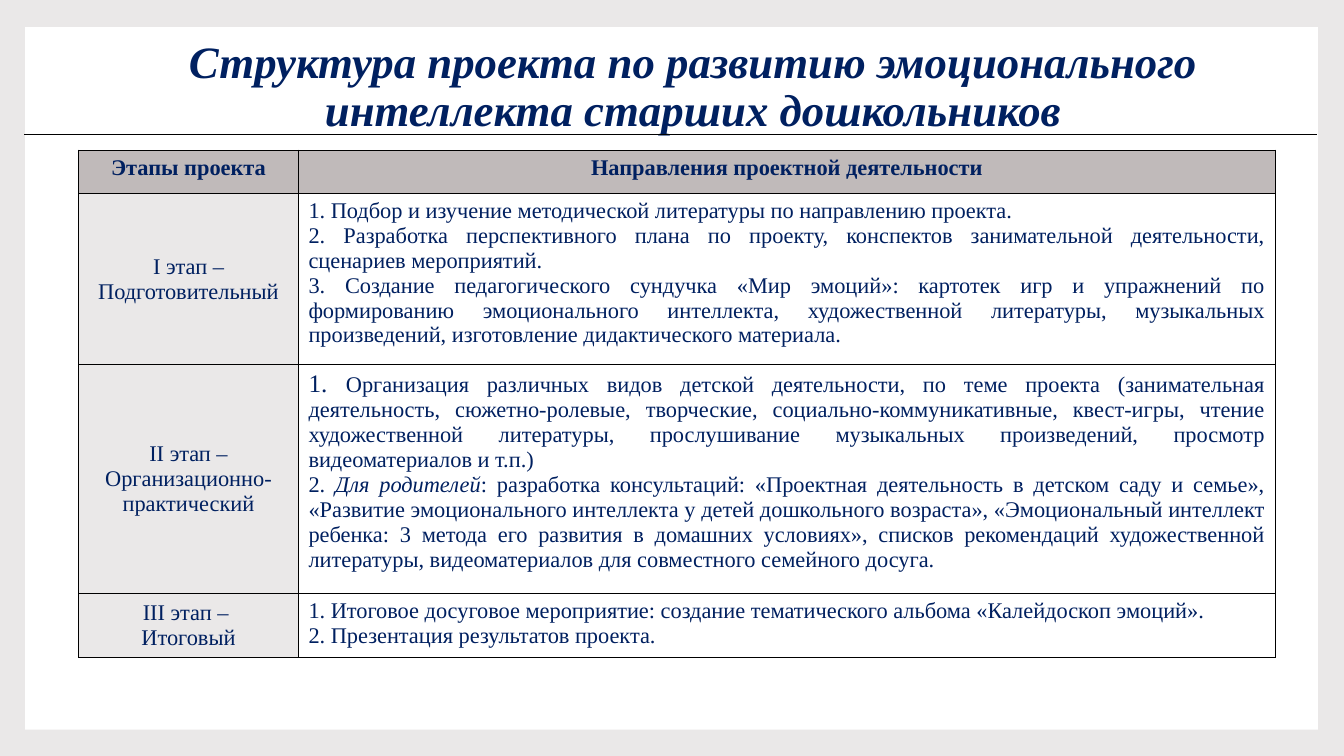
"""Build a slide with the stages of a preschool project."""
from lxml import etree
from pptx import Presentation
from pptx.dml.color import RGBColor
from pptx.enum import shapes, text
from pptx.oxml.ns import qn
from pptx.util import Inches, Pt

FONT = "Times New Roman"
NAVY = RGBColor(0x00, 0x20, 0x60)
BLACK = RGBColor(0x00, 0x00, 0x00)
WHITE = RGBColor(0xFF, 0xFF, 0xFF)
PALE_GRAY = RGBColor(0xEA, 0xE8, 0xE8)
HEADER_GRAY = RGBColor(0xC0, 0xBA, 0xBA)

TITLE = "Структура проекта по развитию эмоционального интеллекта старших дошкольников"
HEADERS = ("Этапы проекта", "Направления проектной деятельности")
STAGES = [
    (["I этап – Подготовительный"], [
        "1. Подбор и изучение методической литературы по направлению проекта.",
        "2. Разработка перспективного плана по проекту, конспектов занимательной "
        "деятельности, сценариев мероприятий.",
        "3. Создание педагогического сундучка «Мир эмоций»: картотек игр и упражнений "
        "по формированию эмоционального интеллекта, художественной литературы, "
        "музыкальных произведений, изготовление дидактического материала.",
    ]),
    (["II этап – Организационно-практический"], [
        [("1. ", {"size": Pt(18)}),
         ("Организация различных видов детской деятельности, по теме проекта "
          "(занимательная деятельность, сюжетно-ролевые, творческие, "
          "социально-коммуникативные, квест-игры, чтение художественной литературы, "
          "прослушивание музыкальных произведений, просмотр видеоматериалов и т.п.)", {})],
        [("2. ", {}),
         ("Для родителей", {"italic": True}),
         (": разработка консультаций: «Проектная деятельность в детском саду и семье», "
          "«Развитие эмоционального интеллекта у детей дошкольного возраста», "
          "«Эмоциональный интеллект ребенка: 3 метода его развития в домашних условиях», "
          "списков рекомендаций художественной литературы, видеоматериалов для "
          "совместного семейного досуга.", {})],
    ]),
    (["III этап – ", "Итоговый"], [
        "1. Итоговое досуговое мероприятие: создание тематического альбома "
        "«Калейдоскоп эмоций».",
        "2. Презентация результатов проекта. ",
    ]),
]
COLUMN_WIDTHS = (2.18, 9.69)
ROW_HEIGHTS = (0.43, 1.57, 2.12, 0.6)


def write_paragraphs(frame, paragraphs, alignment, size, bold=False, italic=False):
    """Fill a text frame with paragraphs given as strings or lists of styled runs."""
    for index, content in enumerate(paragraphs):
        paragraph = frame.paragraphs[0] if index == 0 else frame.add_paragraph()
        paragraph.alignment = alignment
        font = paragraph.font
        font.name, font.size, font.bold, font.italic = FONT, Pt(size), bold, italic
        font.color.rgb = NAVY
        runs = [(content, {})] if isinstance(content, str) else content
        for words, style in runs:
            run = paragraph.add_run()
            run.text = words
            for name, value in style.items():
                setattr(run.font, name, value)


def add_panel(slide, left, top, width, height):
    """Draw the white panel over the gray background."""
    slide.background.fill.solid()
    slide.background.fill.fore_color.rgb = PALE_GRAY
    panel = slide.shapes.add_shape(
        shapes.MSO_SHAPE.RECTANGLE, Inches(left), Inches(top), Inches(width), Inches(height))
    panel.shadow.inherit = False
    panel.fill.solid()
    panel.fill.fore_color.rgb = WHITE
    panel.line.fill.background()


def add_title(slide, left, top, width, height):
    """Place the centred slide title."""
    title = slide.shapes.add_textbox(Inches(left), Inches(top), Inches(width), Inches(height))
    frame = title.text_frame
    frame.word_wrap = True
    frame.vertical_anchor = text.MSO_ANCHOR.MIDDLE
    write_paragraphs(frame, [TITLE], text.PP_ALIGN.CENTER, 32, bold=True, italic=True)
    frame.paragraphs[0].line_spacing = 0.9


def add_rule(slide, left, top, width):
    """Draw the thin horizontal rule under the title."""
    rule = slide.shapes.add_connector(
        shapes.MSO_CONNECTOR.STRAIGHT, Inches(left), Inches(top), Inches(left + width), Inches(top))
    rule.line.color.rgb = BLACK
    rule.line.width = Pt(0.79)
    etree.SubElement(rule._element.spPr, qn("a:effectLst"))


def format_cell(cell, fill_color, anchor):
    """Give a cell black borders, its fill and its vertical anchor."""
    properties = cell._tc.get_or_add_tcPr()
    for side in ("a:lnL", "a:lnR", "a:lnT", "a:lnB"):
        border = etree.SubElement(properties, qn(side), w=str(Pt(1)))
        fill = etree.SubElement(border, qn("a:solidFill"))
        etree.SubElement(fill, qn("a:srgbClr"), val=str(BLACK))
    cell.fill.solid()
    cell.fill.fore_color.rgb = fill_color
    cell.vertical_anchor = anchor


def add_stage_table(slide, left, top):
    """Build the table of project stages and their activities."""
    table = slide.shapes.add_table(
        len(ROW_HEIGHTS), len(COLUMN_WIDTHS), Inches(left), Inches(top),
        Inches(sum(COLUMN_WIDTHS)), Inches(sum(ROW_HEIGHTS))).table
    table.first_row = table.horz_banding = False
    for column, width in zip(table.columns, COLUMN_WIDTHS):
        column.width = Inches(width)
    for row, height in zip(table.rows, ROW_HEIGHTS):
        row.height = Inches(height)
    center, justify = text.PP_ALIGN.CENTER, text.PP_ALIGN.JUSTIFY
    for index, header in enumerate(HEADERS):
        cell = table.cell(0, index)
        format_cell(cell, HEADER_GRAY, text.MSO_ANCHOR.TOP)
        write_paragraphs(cell.text_frame, [header], center, 16, bold=True)
    for index, (stage, activities) in enumerate(STAGES, start=1):
        stage_cell, activity_cell = table.cell(index, 0), table.cell(index, 1)
        format_cell(stage_cell, PALE_GRAY, text.MSO_ANCHOR.MIDDLE)
        format_cell(activity_cell, WHITE, text.MSO_ANCHOR.TOP)
        write_paragraphs(stage_cell.text_frame, stage, center, 16)
        write_paragraphs(activity_cell.text_frame, activities, justify, 16)


def main():
    """Assemble the slide and save the presentation."""
    presentation = Presentation()
    presentation.slide_width, presentation.slide_height = Inches(13.33), Inches(7.5)
    slide = presentation.slides.add_slide(presentation.slide_layouts[6])
    add_panel(slide, 0.25, 0.27, 12.82, 6.97)
    add_title(slide, 0.88, 0.48, 11.99, 0.79)
    add_rule(slide, 0.24, 1.33, 12.82)
    add_stage_table(slide, 0.78, 1.49)
    presentation.save("out.pptx")


if __name__ == "__main__":
    main()
